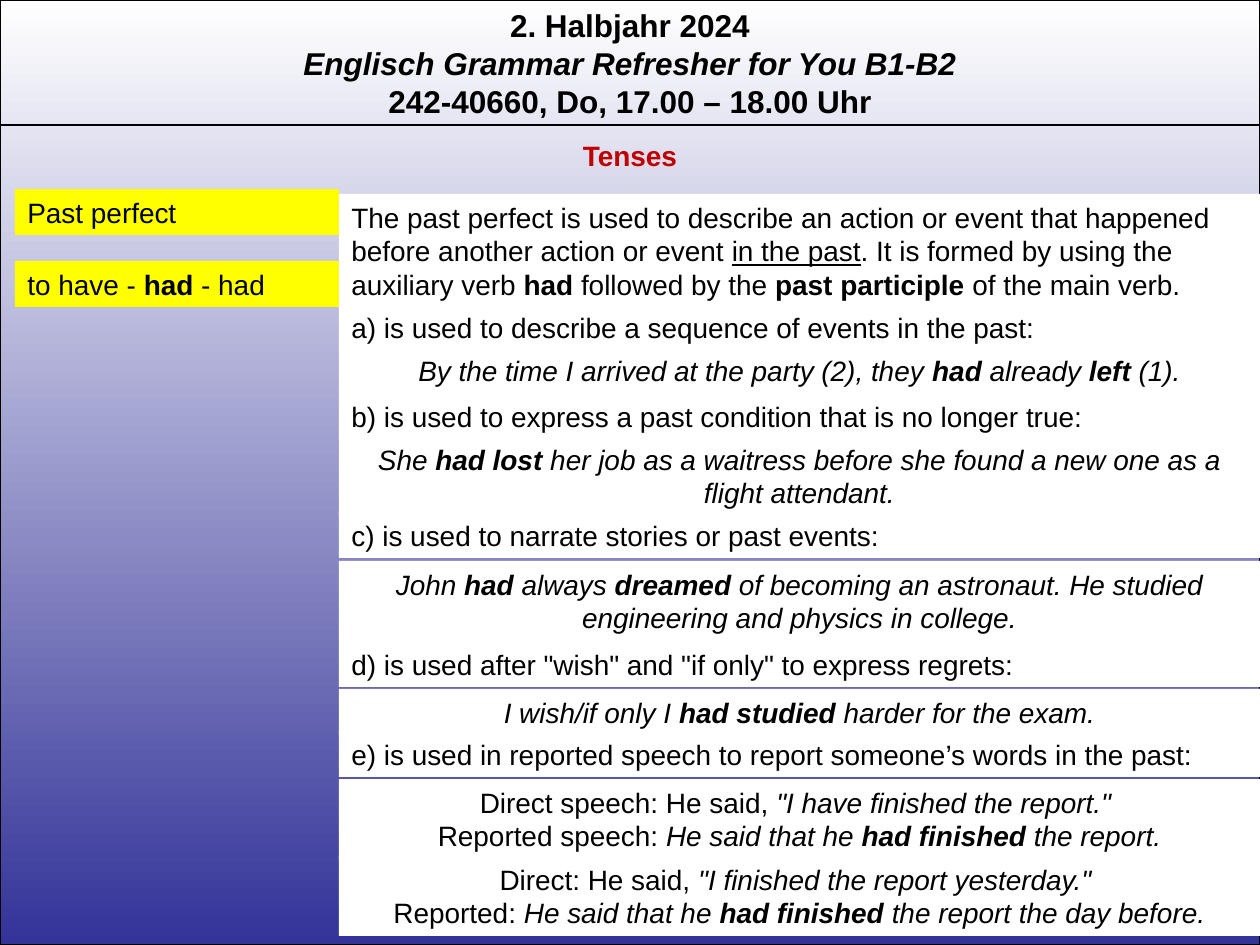
from dataclasses import dataclass

from lxml import etree
from pptx import Presentation
from pptx.dml.color import RGBColor
from pptx.enum.shapes import MSO_CONNECTOR, MSO_SHAPE
from pptx.enum.text import MSO_ANCHOR, MSO_AUTO_SIZE, PP_ALIGN
from pptx.oxml.ns import qn
from pptx.util import Pt

RECTANGLE = MSO_SHAPE.RECTANGLE
STRAIGHT = MSO_CONNECTOR.STRAIGHT
TOP = MSO_ANCHOR.TOP
GROW = MSO_AUTO_SIZE.SHAPE_TO_FIT_TEXT
LEFT, CENTER = PP_ALIGN.LEFT, PP_ALIGN.CENTER
TITLE_ONLY = 5

EMU_PER_PX = 914400 / 126
SLIDE_WIDTH, SLIDE_HEIGHT = 1260, 945
LINE_HEIGHT, ONE_LINE_BOX = 34, 46
TERM_LEFT, TERM_WIDTH = 15, 324
RULE_LEFT = TERM_LEFT + TERM_WIDTH
RULE_WIDTH = SLIDE_WIDTH - RULE_LEFT


@dataclass(frozen=True)
class Theme:
    font: str = "Arial"
    ink: RGBColor = RGBColor(0x00, 0x00, 0x00)
    heading: RGBColor = RGBColor(0xC0, 0x00, 0x00)
    paper: RGBColor = RGBColor(0xFF, 0xFF, 0xFF)
    marker: RGBColor = RGBColor(0xFF, 0xFF, 0x00)
    depth: RGBColor = RGBColor(0x33, 0x33, 0x99)
    header_size: int = 18
    body_size: int = 16
    line_width: float = 0.75


def px(length):
    return round(length * EMU_PER_PX)


def box_height(lines):
    return ONE_LINE_BOX + LINE_HEIGHT * (lines - 1)


class SlideBuilder:
    def __init__(self, slide, theme):
        self.slide = slide
        self.theme = theme

    def fill_text(self, shape, paragraphs, align=LEFT, size=None, color=None):
        frame = shape.text_frame
        settings = {"word_wrap": True, "auto_size": GROW, "vertical_anchor": TOP}
        for name, value in settings.items():
            setattr(frame, name, value)
        for index, runs in enumerate(paragraphs):
            paragraph = frame.add_paragraph() if index else frame.paragraphs[0]
            paragraph.alignment = align
            for text, marks in runs:
                run = paragraph.add_run()
                run.text = text
                run.font.color.rgb = color or self.theme.ink
                formats = {
                    "name": self.theme.font,
                    "size": Pt(size or self.theme.body_size),
                    "bold": "b" in marks,
                    "italic": "i" in marks,
                    "underline": "u" in marks,
                }
                for name, value in formats.items():
                    setattr(run.font, name, value)

    def rectangle(self, left, top, width, height):
        shape = self.slide.shapes.add_shape(
            RECTANGLE, px(left), px(top), px(width), px(height))
        shape.shadow.inherit = False
        return shape

    def backdrop(self):
        shape = self.rectangle(0, 0, SLIDE_WIDTH, SLIDE_HEIGHT)
        shape.fill.gradient()
        shape.fill.gradient_angle = 270
        stops = ((0, self.theme.paper), (1, self.theme.depth))
        for stop, (position, color) in zip(shape.fill.gradient_stops, stops):
            stop.position = position
            stop.color.rgb = color
        shape.line.color.rgb = self.theme.ink
        shape.line.width = Pt(self.theme.line_width)
        self.slide.shapes.title.element.addprevious(shape.element)

    def title(self, top, height, text):
        shape = self.slide.shapes.title
        place = {"left": 0, "top": top, "width": SLIDE_WIDTH, "height": height}
        for name, value in place.items():
            setattr(shape, name, px(value))
        self.fill_text(shape, [[(text, "b")]], CENTER, color=self.theme.heading)

    def header(self, height, paragraphs):
        shape = self.slide.shapes.add_textbox(0, 0, px(SLIDE_WIDTH), px(height))
        self.fill_text(shape, paragraphs, CENTER, self.theme.header_size)

    def divider(self, top):
        line = self.slide.shapes.add_connector(
            STRAIGHT, 0, px(top), px(SLIDE_WIDTH), px(top))
        line.line.color.rgb = self.theme.ink
        line.line.width = Pt(self.theme.line_width)
        etree.SubElement(line.element.spPr, qn("a:effectLst"))

    def panel(self, left, top, width, lines, fill, paragraphs, align=LEFT):
        shape = self.rectangle(left, top, width, box_height(lines))
        shape.fill.solid()
        shape.fill.fore_color.rgb = fill
        shape.line.fill.background()
        self.fill_text(shape, paragraphs, align)

    def term(self, top, runs):
        self.panel(TERM_LEFT, top, TERM_WIDTH, 1, self.theme.marker, [runs])

    def rule(self, top, lines, align, paragraphs):
        self.panel(RULE_LEFT, top, RULE_WIDTH, lines, self.theme.paper,
                   paragraphs, align)


HEADER = [
    [("2. Halbjahr 2024", "b")],
    [("Englisch Grammar Refresher for You B1-B2", "bi")],
    [("242-40660, Do, 17.00 – 18.00 Uhr", "b")],
]

TERMS = [
    (189, [("Past perfect", "")]),
    (261, [("to have - ", ""), ("had ", "b"), ("- had", "")]),
]

RULES = [
    (304, 1, LEFT, [[("a) is used to describe a sequence of events in the past:", "")]]),
    (347, 1, CENTER, [[
        ("By the time I arrived at the party (2), they ", "i"), ("had ", "bi"),
        ("already ", "i"), ("left", "bi"), (" (1).", "i")]]),
    (393, 1, LEFT, [[("b) is used to express a past condition that is no longer true:", "")]]),
    (436, 2, CENTER, [[
        ("She ", "i"), ("had lost ", "bi"),
        ("her job as a waitress before she found a new one as a flight attendant.", "i")]]),
    (512, 1, LEFT, [[("c) is used to narrate stories or past events:", "")]]),
    (561, 2, CENTER, [[
        ("John ", "i"), ("had", "bi"), (" always ", "i"), ("dreamed", "bi"),
        (" of becoming an astronaut. He studied engineering and physics in college.", "i")]]),
    (641, 1, LEFT, [[('d) is used after "wish" and "if only" to express regrets:', "")]]),
    (689, 1, CENTER, [[
        ("I wish/if only I ", "i"), ("had studied ", "bi"), ("harder for the exam.", "i")]]),
    (731, 1, LEFT, [[
        ("e) is used in reported speech to report someone’s words in the past:", "")]]),
    (779, 2, CENTER, [
        [("Direct speech: He said, ", ""), ('"I have finished the report." ', "i")],
        [("Reported speech: ", ""), ("He said that he ", "i"),
         ("had finished ", "bi"), ("the report.", "i")]]),
    (194, 3, LEFT, [[
        ("The past perfect is used to describe an action or event that happened "
         "before another action or event ", ""),
        ("in the past", "u"), (". It is formed by using the auxiliary verb ", ""),
        ("had", "b"), (" followed by the ", ""), ("past participle ", "b"),
        ("of the main verb.", "")]]),
    (856, 2, CENTER, [
        [("Direct: He said, ", ""), ('"I finished the report yesterday." ', "i")],
        [("Reported: ", ""), ("He said that he ", "i"),
         ("had finished ", "bi"), ("the report the day before.", "i")]]),
]


def main():
    presentation = Presentation()
    presentation.slide_width = px(SLIDE_WIDTH)
    presentation.slide_height = px(SLIDE_HEIGHT)
    slide = presentation.slides.add_slide(presentation.slide_layouts[TITLE_ONLY])
    builder = SlideBuilder(slide, Theme())
    builder.backdrop()
    builder.title(132, ONE_LINE_BOX, "Tenses")
    builder.header(127, HEADER)
    builder.divider(125)
    for term in TERMS:
        builder.term(*term)
    for rule in RULES:
        builder.rule(*rule)
    presentation.save("out.pptx")


if __name__ == "__main__":
    main()
